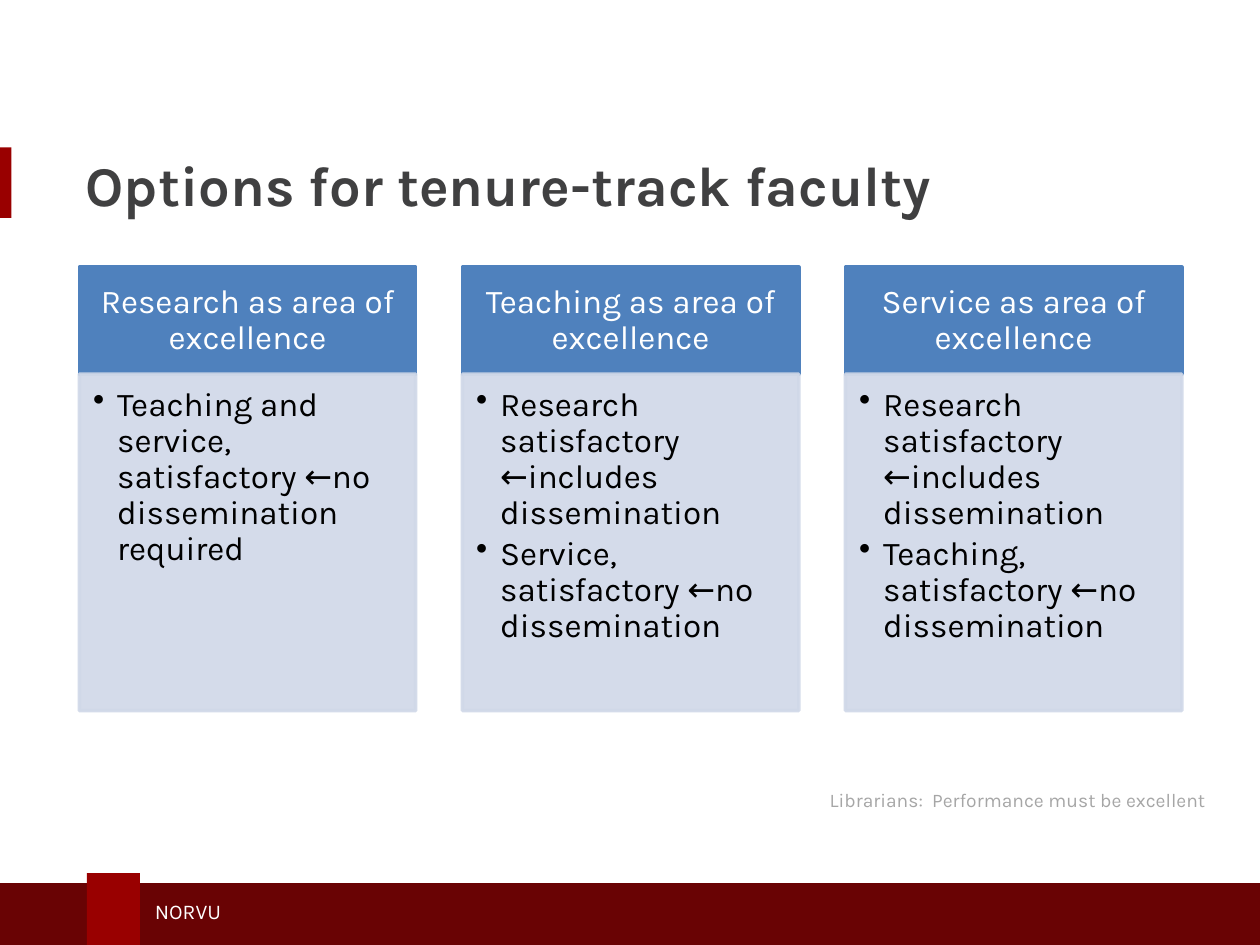
"""Build the slide on excellence options for tenure-track faculty."""
from dataclasses import dataclass
from typing import Optional

from lxml import etree
from pptx import Presentation
from pptx import util as u
from pptx.dml.color import RGBColor
from pptx.enum import shapes, text
from pptx.oxml.ns import qn


@dataclass(frozen=True)
class Theme:
    font: str = "Karla"
    crimson: str = "990000"
    maroon: str = "690304"
    blue: str = "4F81BD"
    pale: str = "D0D8E8"
    white: str = "FFFFFF"
    black: str = "000000"
    charcoal: str = "404041"
    grey: str = "A6A6A6"
    title_size: float = 32
    card_size: float = 19
    footer_size: float = 12
    note_size: float = 11


@dataclass(frozen=True)
class Box:
    left: float
    top: float
    width: float
    height: float

    def emu(self) -> tuple:
        return tuple(u.Inches(v) for v in (self.left, self.top, self.width, self.height))


@dataclass(frozen=True)
class Option:
    area: str
    others: tuple


@dataclass(frozen=True)
class Grid:
    left: float = 0.63
    top: float = 2.12
    column: float = 2.67
    pitch: float = 3.04
    header: float = 0.85
    body: float = 2.67

    def header_box(self, index: int) -> Box:
        return Box(self.left + index * self.pitch, self.top, self.column, self.header)

    def body_box(self, index: int) -> Box:
        return Box(self.left + index * self.pitch, self.top + self.header, self.column, self.body)


THEME = Theme()
GRID = Grid()
OPTIONS = (
    Option("Research", ("Teaching and service, satisfactory ←no dissemination required",)),
    Option("Teaching", ("Research satisfactory ←includes dissemination",
                        "Service, satisfactory ←no dissemination")),
    Option("Service", ("Research satisfactory ←includes dissemination",
                       "Teaching, satisfactory ←no dissemination")),
)


def style(paragraph, size: float, color: str, bold: bool = False) -> None:
    font = paragraph.font
    font.name, font.size, font.bold = THEME.font, u.Pt(size), bold
    font.color.rgb = RGBColor.from_string(color)


def set_frame(frame, anchor, insets: tuple = (0.1, 0.05, 0.1, 0.05)) -> None:
    frame.word_wrap = True
    frame.auto_size = text.MSO_AUTO_SIZE.NONE
    frame.vertical_anchor = anchor
    (frame.margin_left, frame.margin_top,
     frame.margin_right, frame.margin_bottom) = map(u.Inches, insets)


def add_panel(slide, box: Box, color: str, outline: float = 0, opacity: Optional[int] = None):
    panel = slide.shapes.add_shape(shapes.MSO_SHAPE.RECTANGLE, *box.emu())
    panel.shadow.inherit = False
    panel.fill.solid()
    panel.fill.fore_color.rgb = RGBColor.from_string(color)
    if outline:
        panel.line.color.rgb = RGBColor.from_string(color)
        panel.line.width = u.Pt(outline)
    else:
        panel.line.fill.background()
    if opacity is not None:
        for tint in panel._element.spPr.iter(qn("a:srgbClr")):
            etree.SubElement(tint, qn("a:alpha"), val=str(opacity * 1000))
    return panel


def add_label(slide, box: Box, words: str, size: float, color: str, anchor, align) -> None:
    frame = slide.shapes.add_textbox(*box.emu()).text_frame
    set_frame(frame, anchor)
    label = frame.paragraphs[0]
    label.text, label.alignment = words, align
    style(label, size, color)


def add_bullet(paragraph, indent: float) -> None:
    properties = paragraph._p.get_or_add_pPr()
    properties.set("marL", str(u.Inches(indent)))
    properties.set("indent", str(u.Inches(-indent)))
    etree.SubElement(properties, qn("a:buChar"), char="•")


def add_option(slide, index: int, option: Option) -> None:
    header = add_panel(slide, GRID.header_box(index), THEME.blue, outline=2).text_frame
    set_frame(header, text.MSO_ANCHOR.MIDDLE, (0.15, 0.08, 0.15, 0.08))
    heading = header.paragraphs[0]
    heading.text = f"{option.area} as area of excellence"
    heading.alignment, heading.line_spacing = text.PP_ALIGN.CENTER, 0.9
    style(heading, THEME.card_size, THEME.white)

    body = add_panel(slide, GRID.body_box(index), THEME.pale, outline=2, opacity=90).text_frame
    set_frame(body, text.MSO_ANCHOR.TOP, (0.11, 0.11, 0.15, 0.17))
    for number, requirement in enumerate(option.others):
        item = body.add_paragraph() if number else body.paragraphs[0]
        item.text, item.alignment = requirement, text.PP_ALIGN.LEFT
        item.line_spacing, item.space_after = 0.9, u.Pt(3)
        style(item, THEME.card_size, THEME.black)
        add_bullet(item, 0.19)


def add_title(slide, box: Box, words: str) -> None:
    title = slide.shapes.title
    title.left, title.top, title.width, title.height = box.emu()
    set_frame(title.text_frame, text.MSO_ANCHOR.MIDDLE)
    heading = title.text_frame.paragraphs[0]
    heading.text, heading.alignment = words, text.PP_ALIGN.LEFT
    style(heading, THEME.title_size, THEME.charcoal, bold=True)


def main() -> None:
    deck = Presentation()
    deck.slide_width, deck.slide_height = u.Inches(10), u.Inches(7.5)
    slide = deck.slides.add_slide(deck.slide_layouts.get_by_name("Title Only"))
    add_panel(slide, Box(0, 1.17, 0.09, 0.56), THEME.crimson)
    add_panel(slide, Box(-0.03, 7.01, 10.09, 0.5), THEME.maroon)
    add_panel(slide, Box(0.69, 6.93, 0.42, 0.58), THEME.crimson)
    add_label(slide, Box(1.13, 7.08, 3.95, 0.3), "NORVU", THEME.footer_size, THEME.white,
              text.MSO_ANCHOR.MIDDLE, text.PP_ALIGN.LEFT)
    add_title(slide, Box(0.58, 1.11, 8.75, 0.7), "Options for tenure-track faculty")
    add_label(slide, Box(5.62, 6.21, 4.05, 0.37), "Librarians:  Performance must be excellent",
              THEME.note_size, THEME.grey, text.MSO_ANCHOR.TOP, text.PP_ALIGN.RIGHT)
    for index, option in enumerate(OPTIONS):
        add_option(slide, index, option)
    deck.save("out.pptx")


if __name__ == "__main__":
    main()
